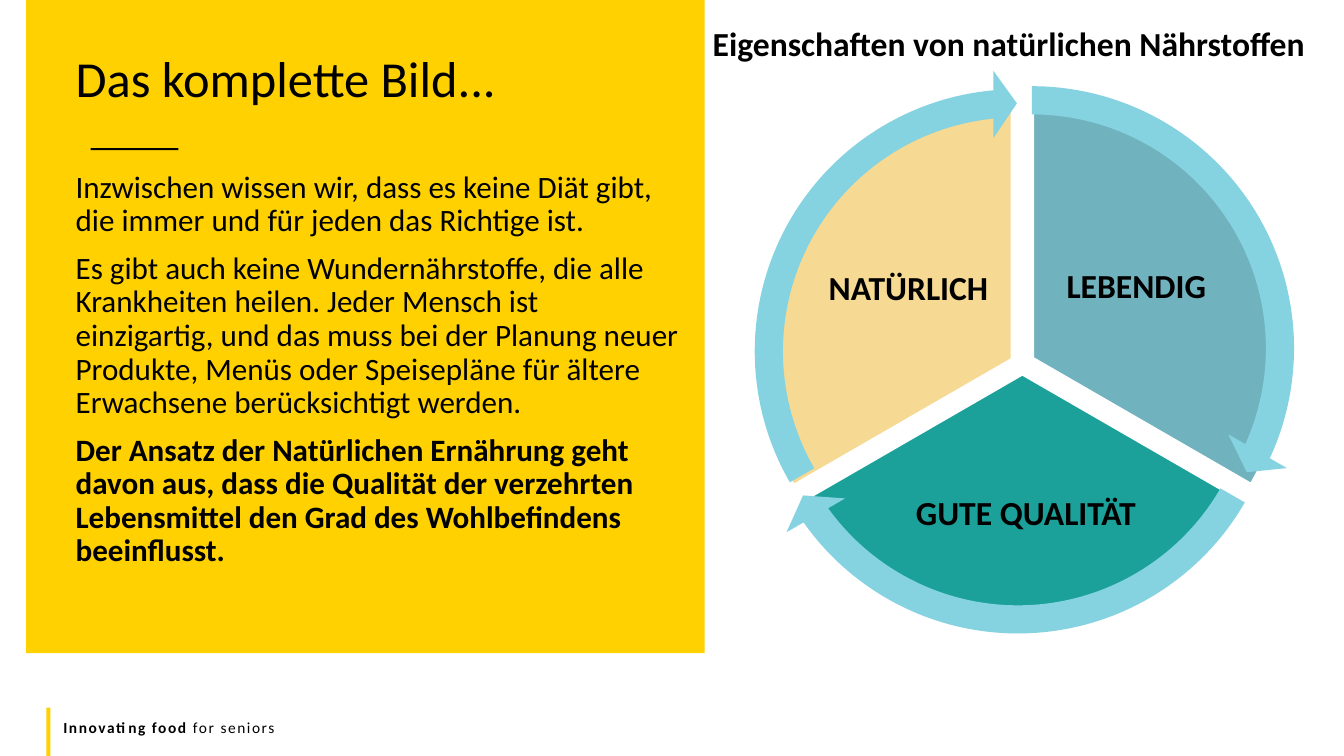
from lxml import etree
from pptx import Presentation
from pptx.dml.color import RGBColor
from pptx.enum import shapes as kinds, text as txt
from pptx.oxml import ns
from pptx.util import Inches, Pt

FONT = "Calibri"
BLACK, WHITE, GOLD, SKY = "000000", "FFFFFF", "FFD100", "85D2E1"
TITLE = "Das komplette Bild..."
BODY = [
    ("Inzwischen wissen wir, dass es keine Diät gibt, die immer und für jeden das Richtige ist.", False),
    ("Es gibt auch keine Wundernährstoffe, die alle Krankheiten heilen. Jeder Mensch ist einzigartig, "
     "und das muss bei der Planung neuer Produkte, Menüs oder Speisepläne für ältere Erwachsene "
     "berücksichtigt werden.", False),
    ("Der Ansatz der Natürlichen Ernährung geht davon aus, dass die Qualität der verzehrten "
     "Lebensmittel den Grad des Wohlbefindens beeinflusst.", True),
]
HEAD = "Eigenschaften von natürlichen Nährstoffen"
FOOT = [("Innovating food ", True), ("for seniors", False)]
BARS = [
    (0.26, 0, 6.73, 6.48, GOLD),
    (0.9, 1.47, 0.87, 0.02, BLACK),
    (0.46, 7.02, 0.04, 0.48, GOLD),
]
PIE, RING = 4.98, 5.59
PARTS = [
    ("LEBENDIG", "70B2BE", (7.76, 1.06), (162, 18), (10.38, 2.11, 1.78, 1.48)),
    ("GUTE QUALITÄT", "1BA19A", (7.65, 1.23), (18, 90), (8.84, 4.46, 2.67, 1.3)),
    ("NATÜRLICH", "F6D992", (7.54, 1.07), (90, 162), (8.12, 2.13, 1.78, 1.48)),
]
ARROWS = [
    ((7.44, 0.66), 14.72, 161.99),
    ((7.3, 0.89), 86.72, 18),
    ((7.29, 0.69), 158.73, 90),
]


def color(code):
    return RGBColor.from_string(code)


def draw(kind, box, fill, line=None, adjust=()):
    part = slide.shapes.add_shape(kind, *map(Inches, box))
    part.shadow.inherit = False
    part.fill.solid()
    part.fill.fore_color.rgb = color(fill)
    if line:
        part.line.color.rgb = color(line)
        part.line.width = Pt(1)
    else:
        part.line.fill.background()
    for i, value in enumerate(adjust):
        part.adjustments[i] = value


def style(par, size, bold=None):
    par.font.name = FONT
    par.font.size = Pt(size)
    par.font.bold = bold
    par.font.color.rgb = color(BLACK)


def label(box, words, size, bold=None):
    frame = slide.shapes.add_textbox(*map(Inches, box)).text_frame
    frame.word_wrap = True
    par = frame.paragraphs[0]
    par.text = words
    style(par, size, bold)
    return frame, par


def fill_in(holder, box, rows, size, space):
    slide.shapes._spTree.append(holder._element)
    holder.left, holder.top, holder.width, holder.height = map(Inches, box)
    frame = holder.text_frame
    frame.auto_size = txt.MSO_AUTO_SIZE.NONE
    frame.vertical_anchor = txt.MSO_ANCHOR.TOP
    for i, (words, bold) in enumerate(rows):
        par = frame.add_paragraph() if i else frame.paragraphs[0]
        par.text = words
        props = par._p.get_or_add_pPr()
        props.set("marL", "0")
        props.set("indent", "0")
        etree.SubElement(props, ns.qn("a:buNone"))
        par.alignment = txt.PP_ALIGN.LEFT
        par.line_spacing = space
        par.space_before = Pt(10 if i else 0)
        style(par, size, bold)


deck = Presentation()
deck.slide_width, deck.slide_height = Inches(13.33), Inches(7.5)
slide = deck.slides.add_slide(deck.slide_layouts[1])
shape = kinds.MSO_SHAPE

for *box, fill in BARS:
    draw(shape.RECTANGLE, box, fill)

foot = label((0.53, 7.07, 12, 0.29), "", 11)[1]
for words, bold in FOOT:
    run = foot.add_run()
    run.text = words
    run.font.bold = bold
    run._r.get_or_add_rPr().set("spc", "110")

fill_in(slide.placeholders[1], (0.65, 1.65, 6.23, 4.5), BODY, 22.2, 0.9)
fill_in(slide.shapes.title, (0.65, 0.53, 5.56, 0.64), [(TITLE, False)], 36, 0.8)

for words, fill, spot, angles, box in PARTS:
    draw(shape.PIE, (*spot, PIE, PIE), fill, WHITE, angles)
    frame, par = label(box, words, 24, True)
    frame.vertical_anchor = txt.MSO_ANCHOR.MIDDLE
    frame.margin_left = frame.margin_right = Inches(0.03)
    frame.margin_top = frame.margin_bottom = Inches(0.03)
    par.alignment = txt.PP_ALIGN.CENTER
    par.line_spacing = 0.9

for spot, end, start in ARROWS:
    draw(shape.CIRCULAR_ARROW, (*spot, RING, RING), SKY, None, (0.05, 3.28, end, start, 0.06))

label((6.97, 0.18, 6.33, 0.5), HEAD, 24, True)

deck.save("out.pptx")
